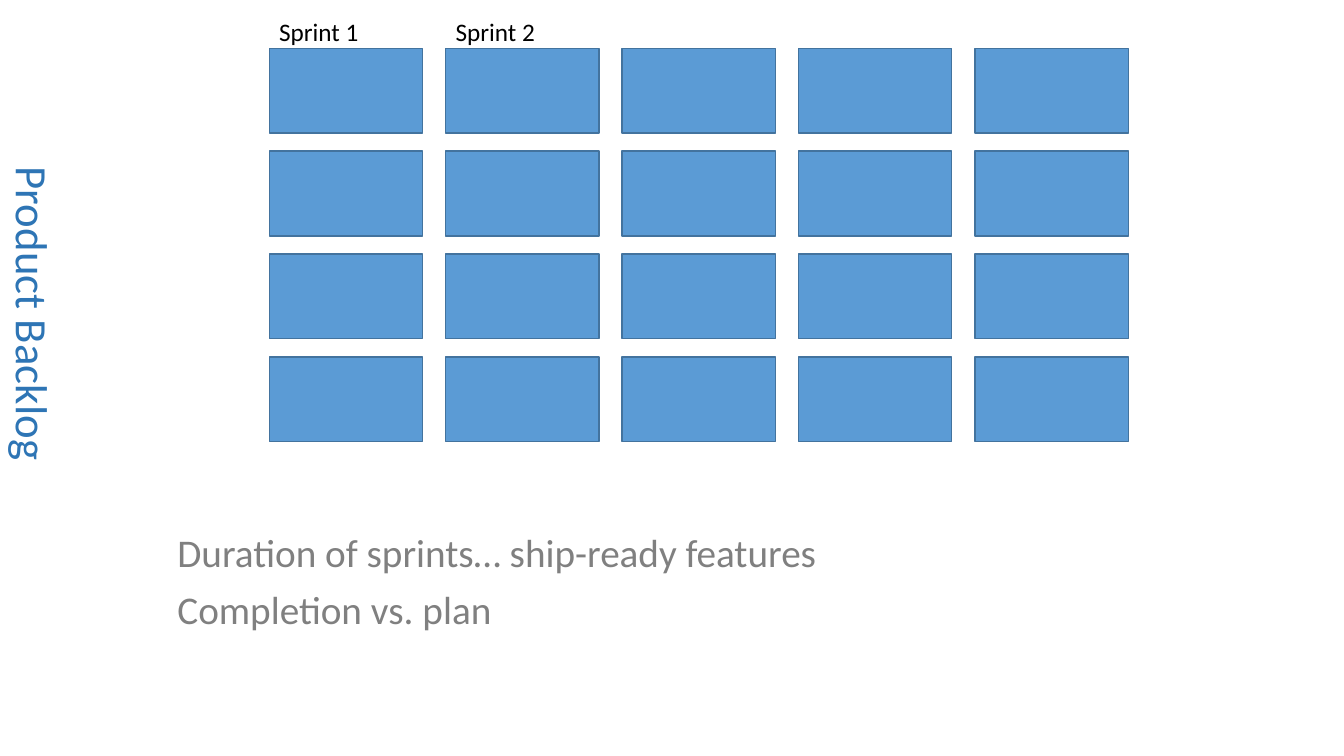
from dataclasses import dataclass

from pptx import Presentation
from pptx.dml.color import RGBColor
from pptx.enum.shapes import MSO_SHAPE
from pptx.enum.text import MSO_ANCHOR, MSO_AUTO_SIZE, PP_ALIGN
from pptx.oxml import parse_xml
from pptx.oxml.ns import nsdecls
from pptx.util import Inches, Pt

RECTANGLE = MSO_SHAPE.RECTANGLE
MIDDLE, BOTTOM = MSO_ANCHOR.MIDDLE, MSO_ANCHOR.BOTTOM
CENTER, LEFT = PP_ALIGN.CENTER, PP_ALIGN.LEFT
NO_FIT, GROW = MSO_AUTO_SIZE.NONE, MSO_AUTO_SIZE.SHAPE_TO_FIT_TEXT

FONT = "Calibri"
COLUMNS, ROWS = 5, 4
GRID_LEFT, GRID_TOP = 2.67, 0.48
COLUMN_STEP, ROW_STEP = 1.75, 1.02


@dataclass(frozen=True)
class Box:
    left: float
    top: float
    width: float
    height: float

    def lengths(self) -> tuple:
        """Left, top, width and height as slide lengths."""
        return tuple(Inches(v) for v in (self.left, self.top, self.width, self.height))

    def turned(self) -> "Box":
        """The box that covers this one after a quarter turn about its centre."""
        shift = (self.width - self.height) / 2
        return Box(self.left + shift, self.top - shift, self.height, self.width)


@dataclass(frozen=True)
class TextStyle:
    size: float
    color: str


TITLE_STYLE = TextStyle(32, "2E75B5")
BODY_STYLE = TextStyle(28, "808080")
LABEL_STYLE = TextStyle(18, "000000")
SPRINTS = ("Sprint 1", "Sprint 2")
NOTES = ("Duration of sprints… ship-ready features", "Completion vs. plan")


def rgb(color: str) -> RGBColor:
    return RGBColor.from_string(color)


def add_span(para, text: str, style: TextStyle) -> None:
    span = para.add_run()
    span.text = text
    span.font.name = FONT
    span.font.size = Pt(style.size)
    span.font.color.rgb = rgb(style.color)


def place(shape, box: Box) -> None:
    shape.left, shape.top, shape.width, shape.height = box.lengths()


def fill_title(title) -> None:
    """Turn the title into a strip that reads downwards on the left edge."""
    place(title, Box(0, 0, 0.92, 6.35).turned())
    title.rotation = 90
    frame = title.text_frame
    frame.auto_size = NO_FIT
    frame.vertical_anchor = BOTTOM
    frame.margin_bottom = Inches(0.06)
    frame.margin_right = Inches(0.13)
    frame.margin_left = frame.margin_top = 0
    para = frame.paragraphs[0]
    para.alignment = CENTER
    para.line_spacing = 0.9
    add_span(para, "Product Backlog", TITLE_STYLE)


def fill_body(body) -> None:
    place(body, Box(1.66, 4.95, 10.76, 1.67))
    frame = body.text_frame
    frame.auto_size = NO_FIT
    frame.vertical_anchor = MIDDLE
    for index, note in enumerate(NOTES):
        para = frame.add_paragraph() if index else frame.paragraphs[0]
        para.alignment = LEFT
        para.line_spacing = 0.9
        para.space_before = Pt(10)
        properties = para._p.get_or_add_pPr()
        properties.set("marL", "0")
        properties.set("indent", "0")
        properties.append(parse_xml(f"<a:buNone {nsdecls('a')}/>"))
        add_span(para, note, BODY_STYLE)


def add_card(page, column: int, row: int) -> None:
    box = Box(GRID_LEFT + column * COLUMN_STEP, GRID_TOP + row * ROW_STEP, 1.52, 0.84)
    card = page.shapes.add_shape(RECTANGLE, *box.lengths())
    card.shadow.inherit = False
    card.fill.solid()
    card.fill.fore_color.rgb = rgb("5B9BD5")
    card.line.color.rgb = rgb("43739E")
    card.line.width = Pt(1)


def add_label(page, column: int, text: str) -> None:
    box = Box(GRID_LEFT + column * COLUMN_STEP, 0.11, 1, 0.4)
    frame = page.shapes.add_textbox(*box.lengths()).text_frame
    frame.word_wrap = False
    frame.auto_size = GROW
    add_span(frame.paragraphs[0], text, LABEL_STYLE)


def main() -> None:
    deck = Presentation()
    deck.slide_width, deck.slide_height = Inches(13.33), Inches(7.5)
    page = deck.slides.add_slide(deck.slide_layouts[1])
    fill_title(page.shapes.title)
    fill_body(page.placeholders[1])
    for row in range(ROWS):
        for column in range(COLUMNS):
            add_card(page, column, row)
    for column, sprint in enumerate(SPRINTS):
        add_label(page, column, sprint)
    deck.save("out.pptx")


if __name__ == "__main__":
    main()
